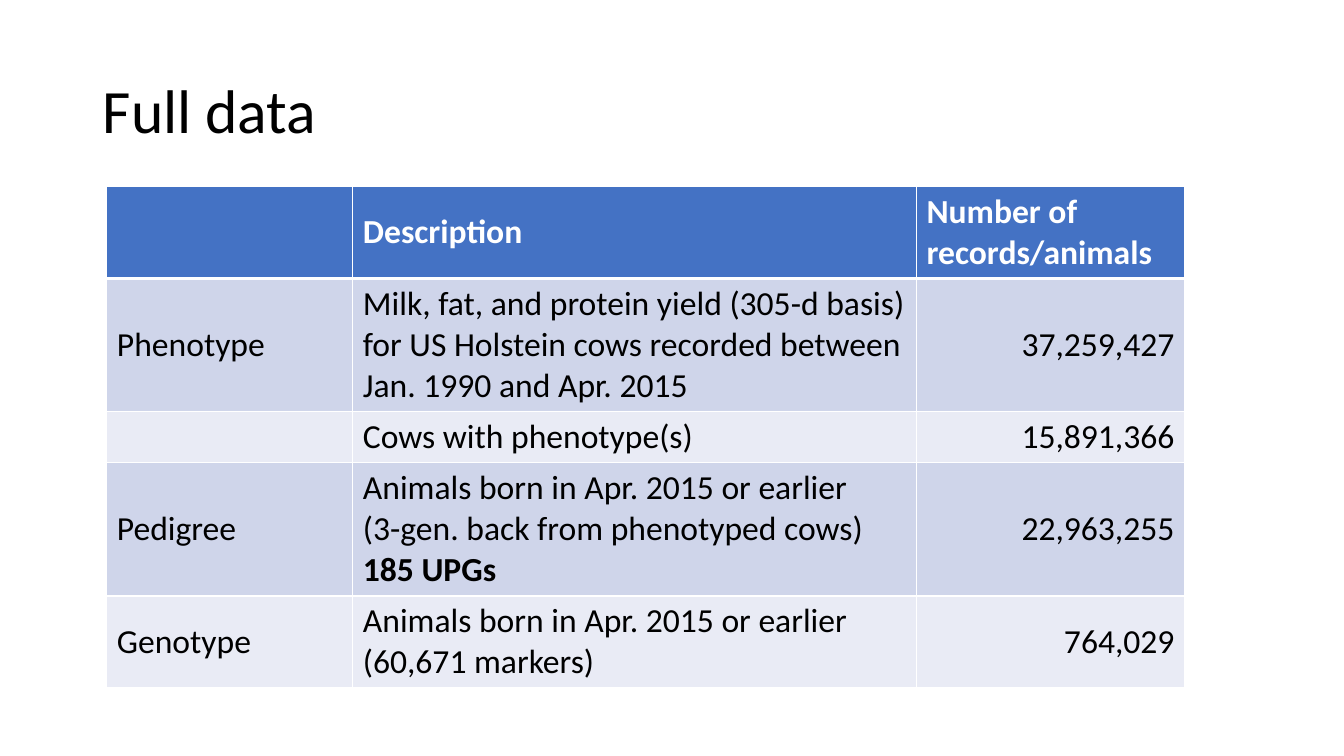
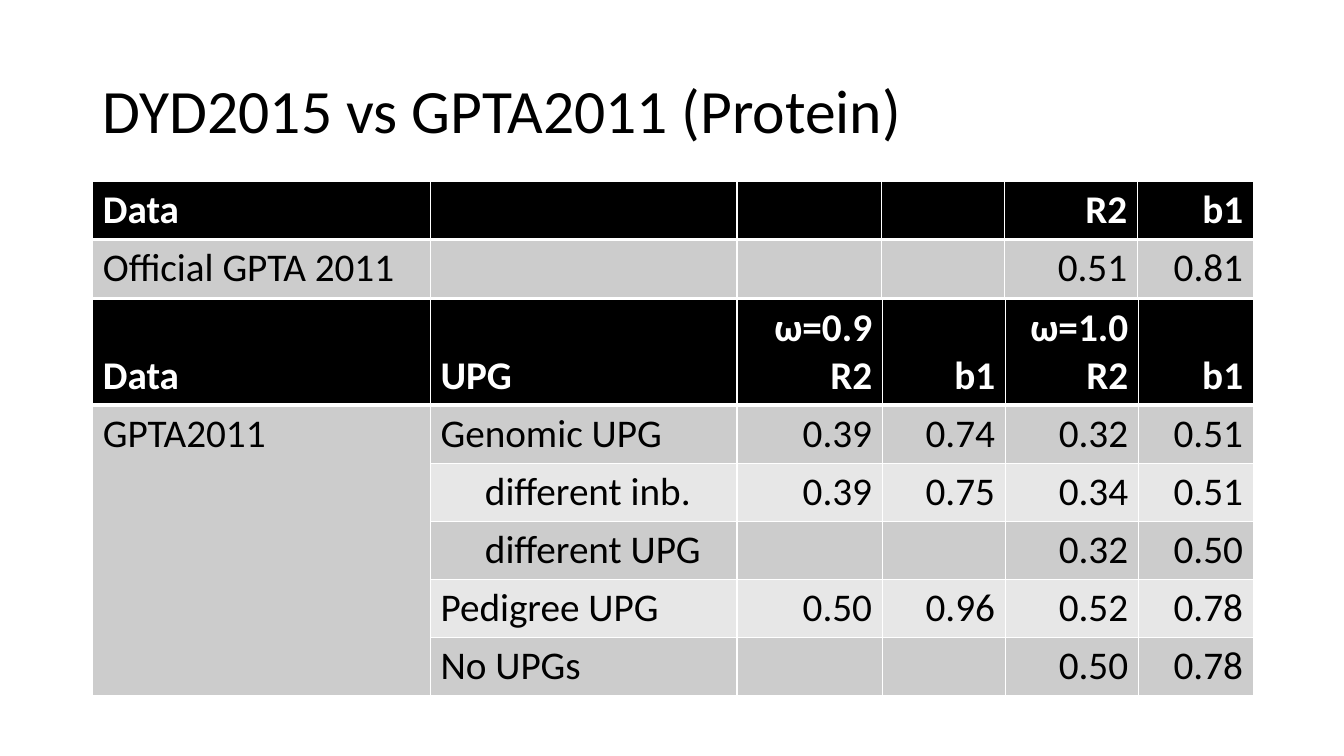
import pptx
import pptx.util
import pptx.dml.color
import pptx.enum.text
import pptx.oxml
import pptx.oxml.ns
import lxml.etree

SCALE = 9144  # EMU in one px, 100 px to the inch
FONT = "Calibri"
BLACK, WHITE = "000000", "FFFFFF"
BLUE = ("4472C4", "CFD5EA", "E9EBF5")  # header, odd row, even row
GREY = (BLACK, "CCCCCC", "E7E7E7")
TITLE = (92, 40, 1150, 145)

ANCHOR = pptx.enum.text.MSO_ANCHOR
ALIGN = pptx.enum.text.PP_ALIGN


def px(num):
    return pptx.util.Emu(num * SCALE)


def color(hex):
    return pptx.dml.color.RGBColor.from_string(hex)


def style(para, size, hex, bold=False):
    for run in para.runs:
        run.font.name = FONT
        run.font.size = pptx.util.Pt(size)
        run.font.bold = bold
        run.font.color.rgb = color(hex)


def border(cell, base):
    """White lines on all four sides; base is the width of the lower one."""
    props = cell._tc.get_or_add_tcPr()
    for side, width in (("L", 1), ("R", 1), ("T", 1), ("B", base)):
        line = lxml.etree.SubElement(
            props, pptx.oxml.ns.qn("a:ln" + side), w=str(pptx.util.Pt(width)))
        fill = lxml.etree.SubElement(line, pptx.oxml.ns.qn("a:solidFill"))
        lxml.etree.SubElement(fill, pptx.oxml.ns.qn("a:srgbClr"), val=WHITE)


def add_slide(deck, title):
    slide = deck.slides.add_slide(deck.slide_layouts[5])
    head = slide.shapes.title
    head.left, head.top, head.width, head.height = map(px, TITLE)
    frame = head.text_frame
    frame.text = title
    frame.word_wrap = True
    frame.vertical_anchor = ANCHOR.MIDDLE
    para = frame.paragraphs[0]
    para.alignment = ALIGN.LEFT
    para.line_spacing = 0.9
    style(para, 44, BLACK)
    return slide


def add_grid(slide, left, top, cols, rows, data, fills, size, anchors,
             first, right_head=True):
    """Banded table; columns from index first on hold right-aligned figures."""
    grid = slide.shapes.add_table(
        len(rows), len(cols), px(left), px(top),
        px(sum(cols)), px(sum(rows))).table
    for col, width in zip(grid.columns, cols):
        col.width = px(width)
    for row, height in zip(grid.rows, rows):
        row.height = px(height)
    for r, line in enumerate(data):
        head = r == 0
        for c, text in enumerate(line):
            cell = grid.cell(r, c)
            border(cell, 3 if head else 1)
            cell.fill.solid()
            cell.fill.fore_color.rgb = color(
                fills[0] if head else fills[2 - r % 2])
            cell.vertical_anchor = anchors[0] if head else anchors[1]
            para = cell.text_frame.paragraphs[0]
            if text:
                para.text = text
            if c >= first and (right_head or not head):
                para.alignment = ALIGN.RIGHT
            style(para, size, WHITE if head else BLACK, head)
    return grid


def data_slide(deck):
    slide = add_slide(deck, "Full data")
    data = [
        ("", "Description", "Number of records/animals"),
        ("Phenotype", "Milk, fat, and protein yield (305-d basis) for US "
         "Holstein cows recorded between Jan. 1990 and Apr. 2015",
         "37,259,427"),
        ("", "Cows with phenotype(s)", "15,891,366"),
        ("Pedigree", "Animals born in Apr. 2015 or earlier\v"
         "(3-gen. back from phenotyped cows)\v185 UPGs", "22,963,255"),
        ("Genotype", "Animals born in Apr. 2015 or earlier\v"
         "(60,671 markers)", "764,029"),
    ]
    grid = add_grid(slide, 106, 185, (244, 559, 266), (91, 132, 50, 132, 91),
                    data, BLUE, 24, (ANCHOR.MIDDLE, ANCHOR.MIDDLE), 2, False)
    # Stress the count of groups
    grid.cell(3, 1).text_frame.paragraphs[0].runs[-1].font.bold = True


def protein_slide(deck):
    slide = add_slide(deck, "DYD2015 vs GPTA2011 (Protein)")
    anchors = (ANCHOR.BOTTOM, ANCHOR.TOP)

    # Results by group
    data = [
        ("Data", "UPG", "ω=0.9\vR2", "b1", "ω=1.0\vR2", "b1"),
        ("GPTA2011", "Genomic UPG", "0.39", "0.74", "0.32", "0.51"),
        ("", "different inb.", "0.39", "0.75", "0.34", "0.51"),
        ("", "different UPG", "", "", "0.32", "0.50"),
        ("", "Pedigree UPG", "0.50", "0.96", "0.52", "0.78"),
        ("", "No UPGs", "", "", "0.50", "0.78"),
    ]
    grid = add_grid(slide, 92, 297, (335, 304, 144, 122, 132, 114),
                    (105,) + (57,) * 5, data, GREY, 28, anchors, 2)
    grid.cell(1, 0).merge(grid.cell(5, 0))
    for r in (2, 3):
        grid.cell(r, 1).margin_left = px(54)

    # Official values
    data = [
        ("Data", "", "", "", "R2", "b1"),
        ("Official GPTA 2011", "", "", "", "0.51", "0.81"),
    ]
    add_grid(slide, 92, 180, (335, 304, 143, 122, 132, 115), (57, 57),
             data, GREY, 28, anchors, 2)


def main():
    deck = pptx.Presentation()
    deck.slide_width, deck.slide_height = px(1333), px(750)
    data_slide(deck)
    protein_slide(deck)
    deck.save("out.pptx")


if __name__ == "__main__":
    main()
